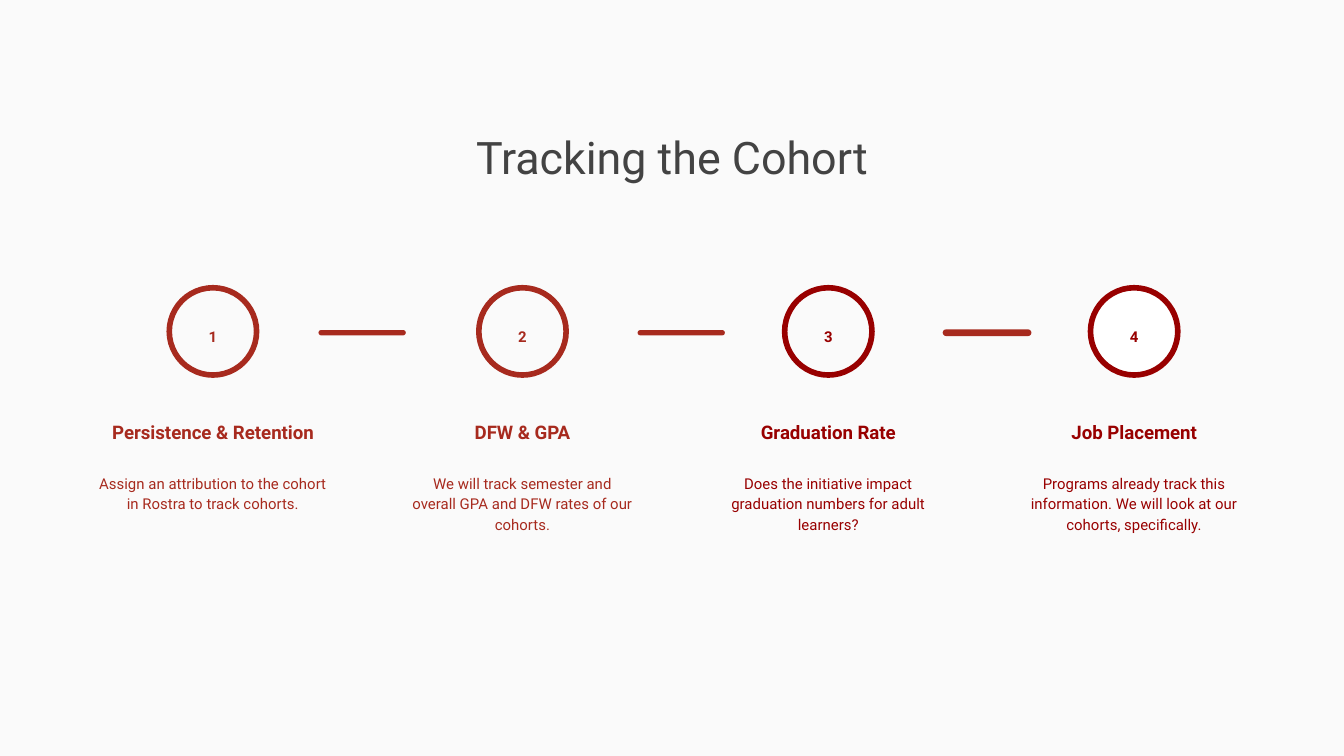
from collections import namedtuple

from pptx import Presentation
from pptx.dml.color import RGBColor
from pptx.enum.shapes import MSO_SHAPE as Preset
from pptx.enum.text import MSO_ANCHOR as Anchor, PP_ALIGN as Align
from pptx.util import Cm, Pt

BACKGROUND = RGBColor(0xFA, 0xFA, 0xFA)
WHITE = RGBColor(0xFF, 0xFF, 0xFF)
GREY = RGBColor(0x43, 0x43, 0x43)
BRICK = RGBColor(0xA7, 0x2A, 0x1E)
MAROON = RGBColor(0x98, 0x00, 0x00)
FONT = "Roboto"

Box = namedtuple("Box", "left top width height")
Step = namedtuple("Step", "left heading body color circle_fill body_overhang")

STEP_TOP, STEP_WIDTH, STEP_HEIGHT = 5.44, 4.75, 5.28
CIRCLE_SIZE = 1.65
STEPS = [
    Step(1.65, "Persistence & Retention",
         "Assign an attribution to the cohort in Rostra to track cohorts.",
         BRICK, None, 0.06),
    Step(7.5, "DFW & GPA",
         "We will track semester and overall GPA and DFW rates of our cohorts.",
         BRICK, None, 0),
    Step(13.28, "Graduation Rate",
         "Does the initiative impact graduation numbers for adult learners?",
         MAROON, None, 0),
    Step(19.06, "Job Placement",
         "Programs already track this information. We will look at our cohorts, specifically.",
         MAROON, WHITE, 0),
]
# Left edge and outline colour of each bar between two steps
BARS = [(6.02, None), (12.05, None), (17.83, BRICK)]


def in_cm(box):
    return [Cm(length) for length in box]


def add_text(shapes, box, text, size, color, bold=False, anchor=Anchor.TOP,
             line_spacing=1.15):
    frame = shapes.add_textbox(*in_cm(box)).text_frame
    frame.word_wrap = True
    frame.vertical_anchor = anchor
    frame.margin_left = frame.margin_right = Cm(0.25)
    frame.margin_top = frame.margin_bottom = Cm(0.25)
    paragraph = frame.paragraphs[0]
    paragraph.text = text
    paragraph.alignment = Align.CENTER
    paragraph.line_spacing = line_spacing
    font = paragraph.font
    font.name, font.size, font.bold = FONT, Pt(size), bold
    font.color.rgb = color


def add_preset(shapes, preset, box, fill, line, line_width):
    """Add a shape without shadow; None for fill or line leaves it out."""
    shape = shapes.add_shape(preset, *in_cm(box))
    shape.shadow.inherit = False
    for part, color in ((shape.fill, fill), (shape.line.fill, line)):
        if color is None:
            part.background()
        else:
            part.solid()
            part.fore_color.rgb = color
    if line is not None:
        shape.line.width = Pt(line_width)
    return shape


def add_step(slide, box, number, step):
    """Group a numbered circle with its heading and body text."""
    shapes = slide.shapes.add_group_shape().shapes
    left, top, width, height = box
    center = left + width / 2
    add_preset(shapes, Preset.OVAL,
               Box(center - CIRCLE_SIZE / 2, top, CIRCLE_SIZE, CIRCLE_SIZE),
               step.circle_fill, step.color, 3)
    add_text(shapes, Box(center - 0.61, top + 0.5, 1.22, 0.89),
             str(number), 8, step.color, bold=True)
    add_text(shapes, Box(left, top + 1.95, width, 1.24),
             step.heading, 10, step.color, bold=True, anchor=Anchor.BOTTOM)
    overhang = step.body_overhang
    add_text(shapes,
             Box(left - overhang, top + 3.23, width + 2 * overhang, height - 3.23),
             step.body, 8, step.color)


def add_bar(slide, box, outline):
    bar = add_preset(slide.shapes, Preset.ROUNDED_RECTANGLE, box, BRICK, outline, 0.75)
    bar.adjustments[0] = 0.5


def main():
    presentation = Presentation()
    presentation.slide_width, presentation.slide_height = Cm(25.4), Cm(14.29)
    slide = presentation.slides.add_slide(presentation.slide_layouts[6])
    slide.background.fill.solid()
    slide.background.fill.fore_color.rgb = BACKGROUND

    add_text(slide.shapes, Box(6.35, 1.97, 12.7, 1.98), "Tracking the Cohort",
             24, GREY, anchor=Anchor.MIDDLE, line_spacing=1.0)
    for number, step in enumerate(STEPS, start=1):
        add_step(slide, Box(step.left, STEP_TOP, STEP_WIDTH, STEP_HEIGHT), number, step)
    for left, outline in BARS:
        add_bar(slide, Box(left, 6.24, CIRCLE_SIZE, 0.1), outline)

    presentation.save("out.pptx")


if __name__ == "__main__":
    main()
